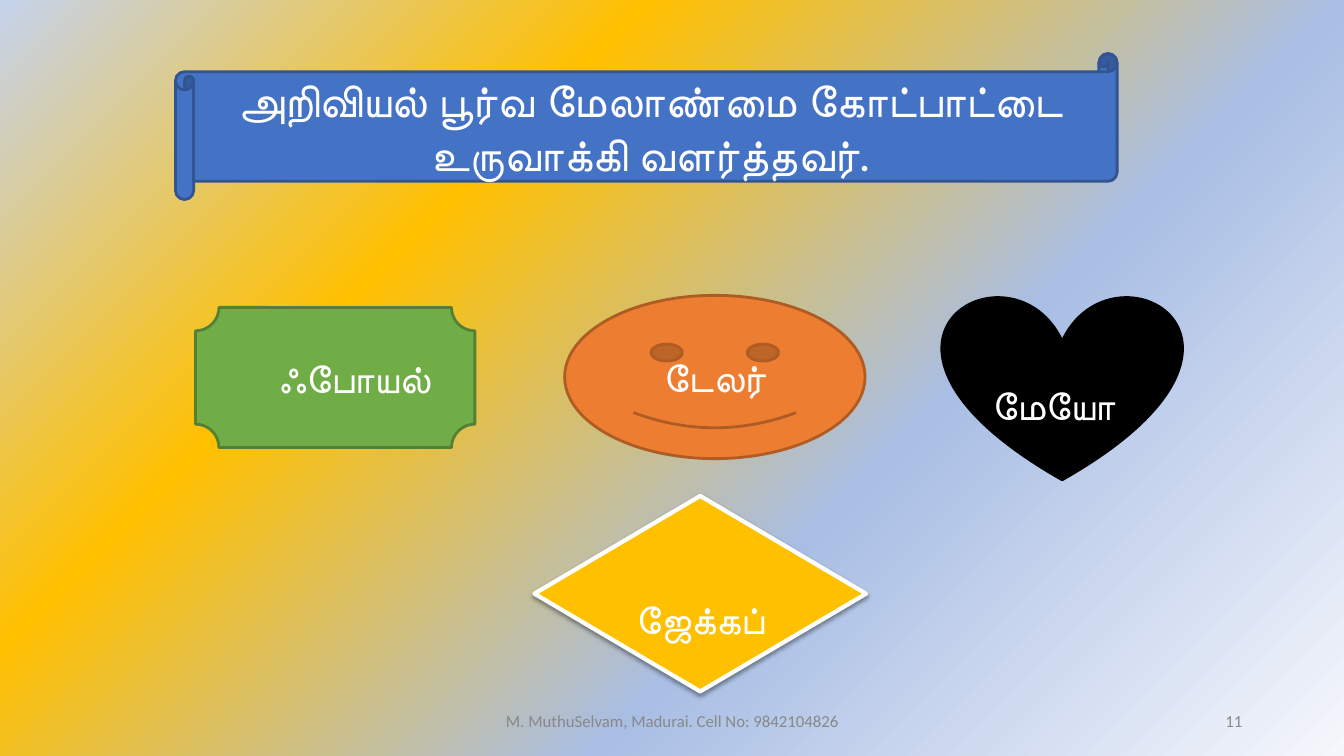
from lxml.etree import SubElement
from pptx import Presentation
from pptx.dml.color import RGBColor
from pptx.enum.shapes import MSO_SHAPE
from pptx.enum.text import MSO_ANCHOR, PP_ALIGN
from pptx.oxml.ns import qn
from pptx.util import Inches, Pt

WHITE = RGBColor(0xFF, 0xFF, 0xFF)
BLACK = RGBColor(0, 0, 0)
GRAY = RGBColor(0x88, 0x88, 0x88)
BLUE = RGBColor(0x44, 0x72, 0xC4)
NAVY = RGBColor(0x32, 0x54, 0x91)
GREEN = RGBColor(0x70, 0xAD, 0x47)
MOSS = RGBColor(0x53, 0x80, 0x35)
ORANGE = RGBColor(0xED, 0x7D, 0x31)
RUST = RGBColor(0xAF, 0x5C, 0x24)
GOLD = RGBColor(0xFF, 0xC0, 0x00)
STOPS = [
    (0, RGBColor(0xF5, 0xF7, 0xFC)),
    (36, RGBColor(0xA9, 0xBE, 0xE4)),
    (69, GOLD),
    (100, RGBColor(0xC5, 0xD3, 0xED)),
]
LEFT, MID, RIGHT = PP_ALIGN.LEFT, PP_ALIGN.CENTER, PP_ALIGN.RIGHT

QUESTION = ("அறிவியல் பூர்வ மேலாண்மை கோட்பாட்டை உருவாக்கி வளர்த்தவர்.",
            MSO_SHAPE.HORIZONTAL_SCROLL, (1.74, 0.53, 9.34, 1.45),
            BLUE, NAVY, 2, MID, 32, False, (0.1, 0.05))
CHOICES = [
    ("ஃபோயல்", MSO_SHAPE.PLAQUE, (1.94, 3.05, 2.77, 1.39),
     GREEN, MOSS, 2, LEFT, 28, False, (0.65, 0.05)),
    ("டேலர்", MSO_SHAPE.SMILEY_FACE, (5.6, 2.93, 2.98, 1.62),
     ORANGE, RUST, 2, MID, 28, True, (0.1, 0.05)),
    ("மேயோ", MSO_SHAPE.HEART, (9.35, 2.93, 2.37, 1.83),
     BLACK, BLACK, 2, LEFT, 28, False, (0.1, 0.55)),
    ("ஜேக்கப்", MSO_SHAPE.DIAMOND, (5.3, 4.92, 3.29, 1.94),
     GOLD, WHITE, 3, MID, 28, False, (0.1, 0.55)),
]
FOOTER = [
    ("M. MuthuSelvam, Madurai. Cell No: 9842104826", (4.42, 6.95, 4.5, 0.4), MID),
    ("11", (9.42, 6.95, 3, 0.4), RIGHT),
]


def write(shape, text, align, size, font, color, bold=False, inset=(0.1, 0.05)):
    frame = shape.text_frame
    frame.word_wrap = True
    frame.vertical_anchor = MSO_ANCHOR.MIDDLE
    frame.margin_left, frame.margin_top = map(Inches, inset)
    para = frame.paragraphs[0]
    para.alignment = align
    run = para.add_run()
    run.text = text
    run.font.size = Pt(size)
    run.font.name = font
    run.font.bold = bold
    run.font.color.rgb = color


def add_card(slide, text, kind, box, fill, line, width, align, size, bold, inset):
    card = slide.shapes.add_shape(kind, *map(Inches, box))
    card.shadow.inherit = False
    card.fill.solid()
    card.fill.fore_color.rgb = fill
    card.line.color.rgb = line
    card.line.width = Pt(width)
    write(card, text, align, size, "Lato", WHITE, bold, inset)
    return card


def add_shadow(shape):
    effects = shape.element.spPr.find(qn("a:effectLst"))
    outer = SubElement(effects, qn("a:outerShdw"), blurRad=str(Pt(3.1)),
                       dist=str(Pt(1.6)), dir="5400000", rotWithShape="0")
    color = SubElement(outer, qn("a:srgbClr"), val=str(BLACK))
    SubElement(color, qn("a:alpha"), val="38000")


def paint(slide):
    slide.background.fill.gradient()
    grad = slide.element.find(".//" + qn("a:gradFill"))
    for part in list(grad):
        grad.remove(part)
    stops = SubElement(grad, qn("a:gsLst"))
    for place, color in STOPS:
        stop = SubElement(stops, qn("a:gs"), pos=str(place * 1000))
        SubElement(stop, qn("a:srgbClr"), val=str(color))
    path = SubElement(grad, qn("a:path"), path="circle")
    SubElement(path, qn("a:fillToRect"), l="100000", t="100000")
    SubElement(grad, qn("a:tileRect"), r="-100000", b="-100000")


def main():
    """Build the quiz slide with its question and four choices."""
    deck = Presentation()
    deck.slide_width, deck.slide_height = Inches(13.33), Inches(7.5)
    slide = deck.slides.add_slide(deck.slide_layouts[6])
    paint(slide)
    for item in [QUESTION, *CHOICES]:
        card = add_card(slide, *item)
    add_shadow(card)
    for text, box, align in FOOTER:
        note = slide.shapes.add_textbox(*map(Inches, box))
        write(note, text, align, 12, "Calibri", GRAY)
    deck.save("out.pptx")


if __name__ == "__main__":
    main()
